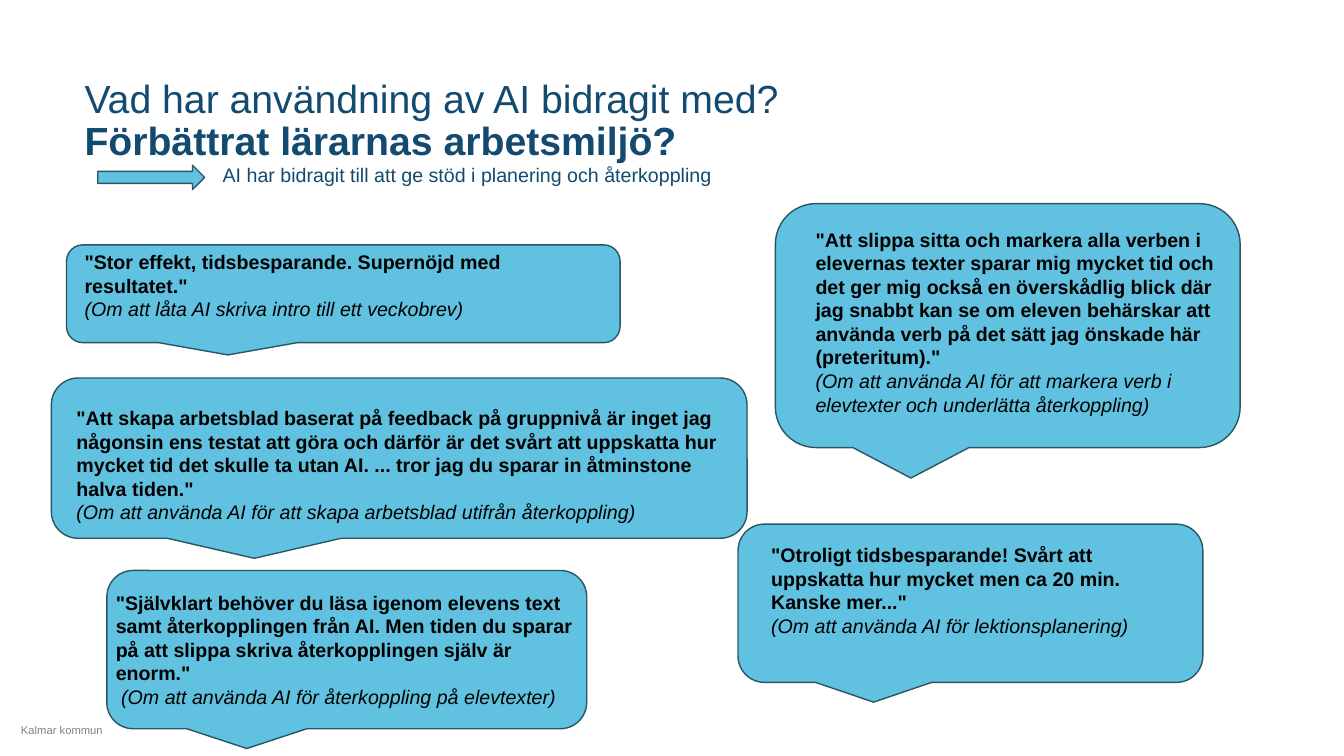
from pptx import Presentation
from pptx.dml.color import RGBColor
from pptx.enum.shapes import MSO_SHAPE
from pptx.util import Emu, Pt

EMU_PER_PX = 9144  # 100 px to the inch
FONT = "Arial"
COLORS = {"title": "124A70", "bubble": "60C2E0", "outline": "2A5562",
          "quote": "000000", "footer": "808080"}

# (bubble box, text box, quote, remark); boxes are left, top, width, height
BUBBLES = [
    ((732, 520, 461, 157), (755, 534, 416, 135),
     '"Otroligt tidsbesparande! Svårt att uppskatta hur mycket men ca 20 min. Kanske mer..."',
     "(Om att använda AI för lektionsplanering)"),
    ((66, 243, 549, 97), (74, 243, 522, 111),
     '"Stor effekt, tidsbesparande. Supernöjd med resultatet."',
     "(Om att låta AI skriva intro till ett veckobrev)"),
    ((106, 566, 476, 157), (105, 581, 477, 128),
     '"Självklart behöver du läsa igenom elevens text samt återkopplingen från AI. '
     'Men tiden du sparar på att slippa skriva återkopplingen själv är enorm."',
     " (Om att använda AI för återkoppling på elevtexter)"),
    ((51, 375, 690, 159), (66, 398, 667, 158),
     '"Att skapa arbetsblad baserat på feedback på gruppnivå är inget jag någonsin ens '
     'testat att göra och därför är det svårt att uppskatta hur mycket tid det skulle ta '
     'utan AI. ... tror jag du sparar in åtminstone halva tiden."',
     "(Om att använda AI för att skapa arbetsblad utifrån återkoppling)"),
    ((769, 202, 461, 242), (799, 221, 422, 229),
     '"Att slippa sitta och markera alla verben i elevernas texter sparar mig mycket tid '
     'och det ger mig också en överskådlig blick där jag snabbt kan se om eleven behärskar '
     'att använda verb på det sätt jag önskade här (preteritum)."',
     "(Om att använda AI för att markera verb i elevtexter och underlätta återkoppling)"),
]


def px(*lengths):
    return [Emu(length * EMU_PER_PX) for length in lengths]


def color(name):
    return RGBColor.from_string(COLORS[name])


def add_text(slide, box, lines, size, color_name, line_spacing=1.0):
    """Add a text box; each line is a (text, bold, italic) paragraph."""
    frame = slide.shapes.add_textbox(*px(*box)).text_frame
    frame.word_wrap = True
    for index, (text, bold, italic) in enumerate(lines):
        paragraph = frame.add_paragraph() if index else frame.paragraphs[0]
        paragraph.text = text
        paragraph.line_spacing = line_spacing
        font = paragraph.font
        font.name, font.size = FONT, Pt(size)
        font.bold, font.italic = bold, italic
        font.color.rgb = color(color_name)


def add_blue_shape(slide, kind, box):
    shape = slide.shapes.add_shape(kind, *px(*box))
    shape.shadow.inherit = False
    shape.fill.solid()
    shape.fill.fore_color.rgb = color("bubble")
    shape.line.color.rgb = color("outline")
    shape.line.width = Pt(1)


def add_speech_bubble(slide, bubble_box, text_box, quote, remark):
    add_blue_shape(slide, MSO_SHAPE.ROUNDED_RECTANGULAR_CALLOUT, bubble_box)
    add_text(slide, text_box, [(quote, True, False), (remark, False, True)], 14, "quote")


def main():
    presentation = Presentation()
    presentation.slide_width, presentation.slide_height = px(1333, 750)
    slide = presentation.slides.add_slide(presentation.slide_layouts[6])

    add_text(slide, (11, 714, 277, 28), [("Kalmar kommun", False, False)], 8, "footer", 0.9)
    add_text(slide, (74, 74, 768, 90),
             [("Vad har användning av AI bidragit med?", False, False),
              ("Förbättrat lärarnas arbetsmiljö?", True, False)], 28, "title", 0.9)
    add_text(slide, (211, 157, 630, 32),
             [("AI har bidragit till att ge stöd i planering och återkoppling", False, False)],
             14, "title")
    add_blue_shape(slide, MSO_SHAPE.RIGHT_ARROW, (97, 164, 106, 24))

    for bubble in BUBBLES:
        add_speech_bubble(slide, *bubble)

    presentation.save("out.pptx")


if __name__ == "__main__":
    main()
